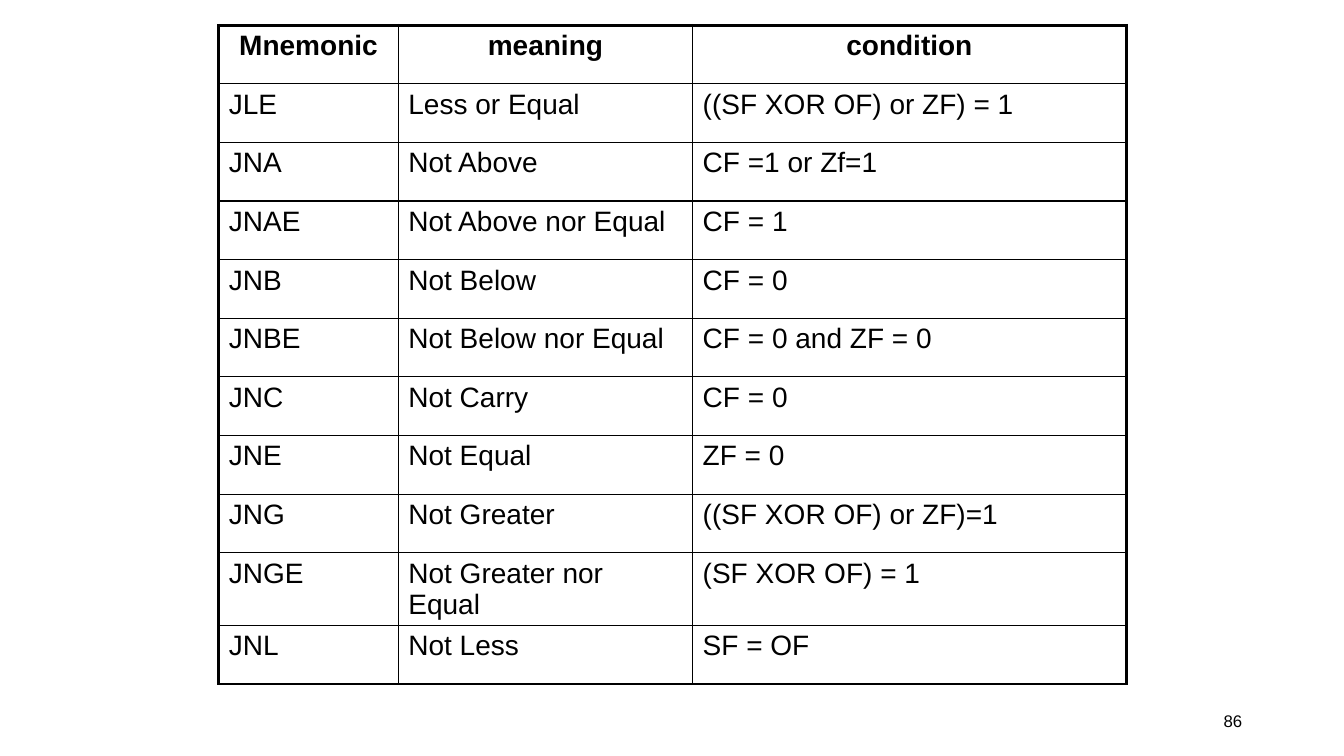
"""Build a slide with a table of conditional jump mnemonics."""
from pptx import Presentation
from pptx.dml.color import RGBColor as RGB
from pptx.enum.text import MSO_ANCHOR as Anchor, PP_ALIGN as Align
from pptx.oxml import parse_xml
from pptx.oxml.ns import nsdecls
from pptx.util import Pt

PX = 9144
INK = {"text": "000000", "line": "000000"}
THIN, THICK = Pt(1), Pt(2.25)


def write(frame, text, size=20, bold=False, align=Align.LEFT):
    para = frame.paragraphs[0]
    para.alignment = align
    run = para.add_run()
    run.text = text
    font = run.font
    font.name, font.size, font.bold = "Arial", Pt(size), bold
    font.color.rgb = RGB.from_string(INK["text"])


def edge(cell, side, width):
    cell._tc.get_or_add_tcPr().append(parse_xml(
        f'<a:ln{side} {nsdecls("a")} w="{width}"><a:solidFill>'
        f'<a:srgbClr val="{INK["line"]}"/></a:solidFill></a:ln{side}>'))


deck = Presentation()
deck.slide_width, deck.slide_height = 1333 * PX, 750 * PX
slide = deck.slides.add_slide(deck.slide_layouts[6])

rows = [
    ("Mnemonic", "meaning", "condition"),
    ("JLE", "Less or Equal", "((SF XOR OF) or ZF) = 1"),
    ("JNA", "Not Above", "CF =1 or Zf=1"),
    ("JNAE", "Not Above nor Equal", "CF = 1"),
    ("JNB", "Not Below", "CF = 0"),
    ("JNBE", "Not Below nor Equal", "CF = 0 and ZF = 0"),
    ("JNC", "Not Carry", "CF = 0"),
    ("JNE", "Not Equal", "ZF = 0"),
    ("JNG", "Not Greater", "((SF XOR OF) or ZF)=1"),
    ("JNGE", "Not Greater nor Equal", "(SF XOR OF) = 1"),
    ("JNL", "Not Less", "SF = OF"),
]
wide = [178, 292, 430]
table = slide.shapes.add_table(
    len(rows), len(wide), 217 * PX, 25 * PX, sum(wide) * PX, 640 * PX).table
table.horz_banding = False
for col, width in zip(table.columns, wide):
    col.width = width * PX

for r, row in enumerate(rows):
    head = r == 0
    for c, text in enumerate(row):
        cell = table.cell(r, c)
        write(cell.text_frame, text, bold=head,
              align=Align.CENTER if head else Align.LEFT)
        outer = {"L": c == 0, "R": c == len(wide) - 1,
                 "T": head, "B": r == len(rows) - 1}
        for side, rim in outer.items():
            edge(cell, side, THICK if rim else THIN)
        cell.fill.background()

page = slide.shapes.add_textbox(942 * PX, 695 * PX, 300 * PX, 40 * PX).text_frame
page.word_wrap = True
page.vertical_anchor = Anchor.MIDDLE
write(page, "86", size=12, align=Align.RIGHT)

deck.save("out.pptx")
